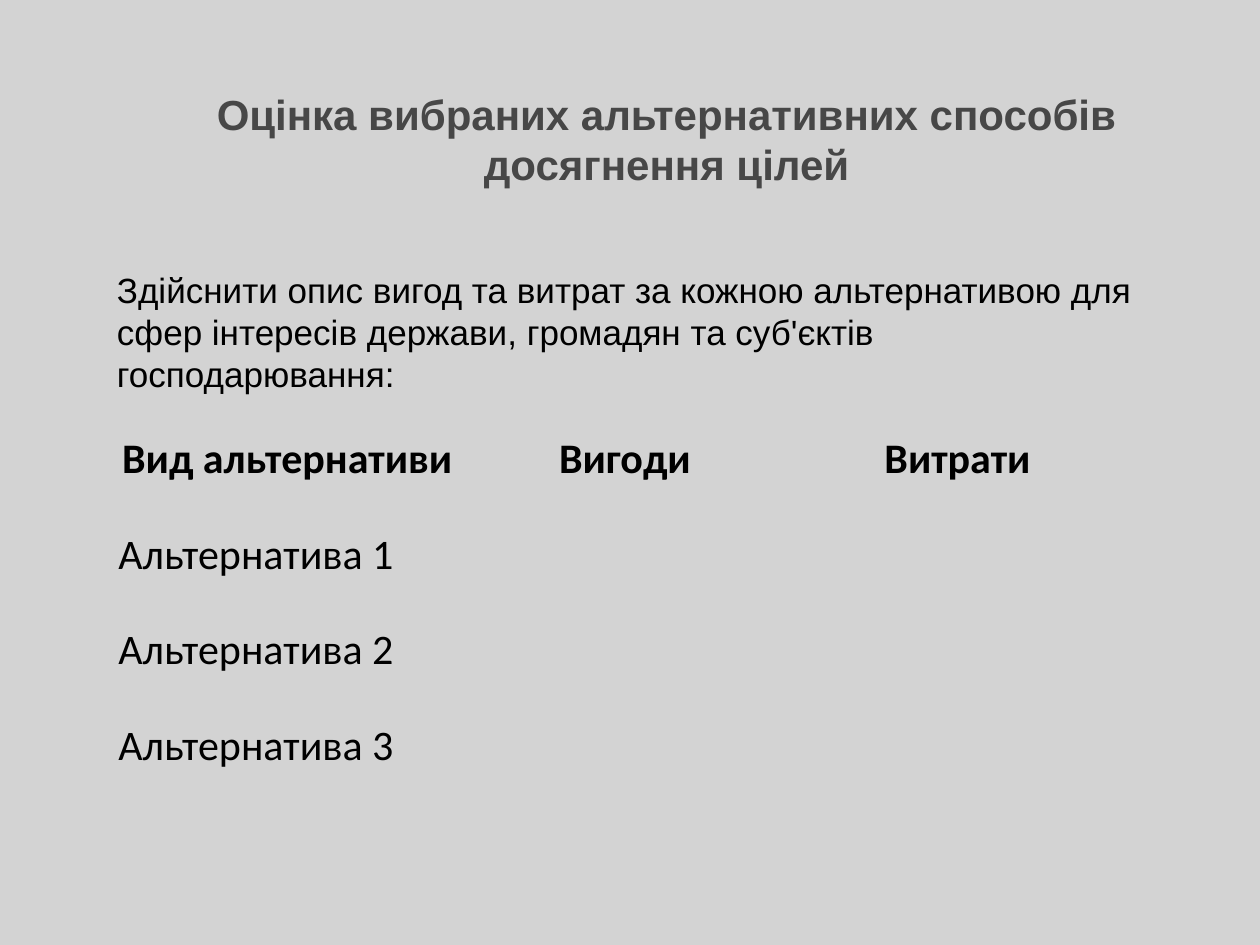
"""Build the slide on assessing alternative ways of reaching goals."""
from dataclasses import dataclass

import pptx
import pptx.dml.color
import pptx.enum.text
import pptx.util

Inches = pptx.util.Inches
Align = pptx.enum.text.PP_ALIGN
Anchor = pptx.enum.text.MSO_ANCHOR

COLOURS = {"background": "D3D3D3", "title": "474747", "text": "000000"}
NO_GRID_STYLE = "{2D5ABB26-0587-4C30-8999-92F81FD0307C}"
COLUMN_WIDTHS = (2.72, 2.64, 2.64)
ROW_HEIGHTS = (0.76, 0.76, 0.76, 0.56)
HEADINGS = ("Вид альтернативи", "Вигоди", "Витрати")
CELL_INSET = 0.02


@dataclass
class Box:
    left: float
    top: float
    width: float
    height: float

    def lengths(self) -> tuple:
        return tuple(map(Inches, (self.left, self.top, self.width, self.height)))


def colour(name: str) -> pptx.dml.color.RGBColor:
    """Look up a named colour."""
    return pptx.dml.color.RGBColor.from_string(COLOURS[name])


def write(frame, text: str, *, size: int, font: str = "Arial", ink: str = "text",
          bold: bool = False, align=Align.LEFT, anchor=Anchor.TOP) -> None:
    """Write formatted text into a text frame."""
    frame.word_wrap = True
    frame.vertical_anchor = anchor
    paragraph = frame.paragraphs[0]
    paragraph.alignment = align
    run = paragraph.add_run()
    run.text = text
    run.font.name = font
    run.font.size = pptx.util.Pt(size)
    run.font.bold = bold
    run.font.color.rgb = colour(ink)


def add_text(slide, box: Box, text: str, **style) -> None:
    """Add a text box with formatted text."""
    write(slide.shapes.add_textbox(*box.lengths()).text_frame, text, **style)


def add_alternatives(slide, box: Box) -> None:
    """Add the table of alternatives with their benefits and costs."""
    frame = slide.shapes.add_table(len(ROW_HEIGHTS), len(COLUMN_WIDTHS), *box.lengths())
    table = frame.table
    table.horz_banding = False
    table.first_row = False
    table._tbl.tblPr.find(pptx.oxml.ns.qn("a:tableStyleId")).text = NO_GRID_STYLE
    for column, width in zip(table.columns, COLUMN_WIDTHS):
        column.width = Inches(width)
    for row, height in zip(table.rows, ROW_HEIGHTS):
        row.height = Inches(height)
    for cell in table.iter_cells():
        cell.fill.background()
        cell.margin_left = cell.margin_right = Inches(CELL_INSET)
        cell.margin_top = cell.margin_bottom = Inches(CELL_INSET)
    for index, heading in enumerate(HEADINGS):
        write(table.cell(0, index).text_frame, heading, size=24, font="Calibri",
              bold=True, align=Align.CENTER)
    for number in range(1, len(ROW_HEIGHTS)):
        write(table.cell(number, 0).text_frame, f"Альтернатива {number}",
              size=24, font="Calibri")


def main() -> None:
    """Build and save the presentation."""
    presentation = pptx.Presentation()
    presentation.slide_width = Inches(10)
    presentation.slide_height = Inches(7.5)
    slide = presentation.slides.add_slide(presentation.slide_layouts[6])
    slide.background.fill.solid()
    slide.background.fill.fore_color.rgb = colour("background")
    add_text(slide, Box(1.08, 0.75, 8.42, 0.8),
             "Оцінка вибраних альтернативних способів досягнення цілей",
             size=24, ink="title", bold=True, align=Align.CENTER, anchor=Anchor.BOTTOM)
    add_text(slide, Box(0.83, 2.08, 8.33, 1.11),
             "Здійснити опис вигод та витрат за кожною альтернативою для сфер інтересів "
             "держави, громадян та суб'єктів господарювання:", size=20)
    add_alternatives(slide, Box(0.92, 3.42, sum(COLUMN_WIDTHS), sum(ROW_HEIGHTS)))
    presentation.save("out.pptx")


if __name__ == "__main__":
    main()
